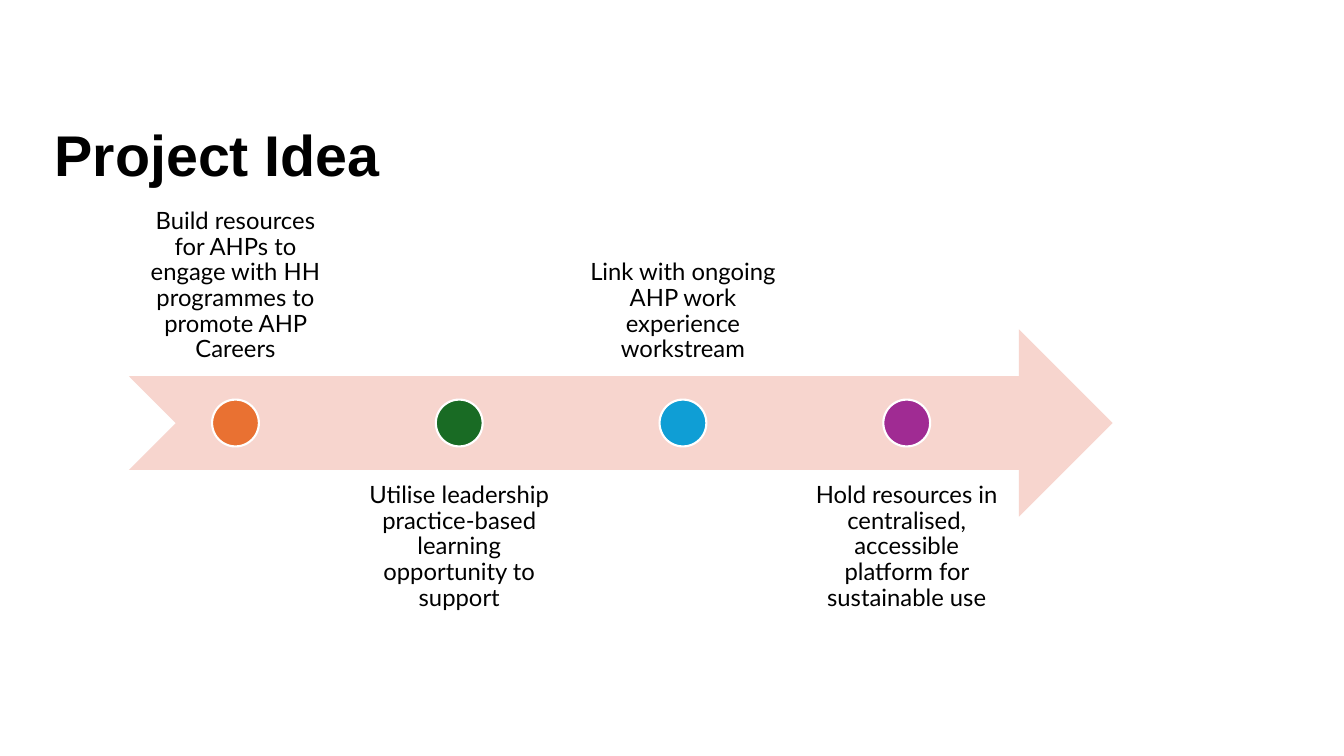
import pptx
import pptx.util
import pptx.dml.color
import pptx.enum.shapes
import pptx.enum.text

Cm = pptx.util.Cm
Pt = pptx.util.Pt
Anchor = pptx.enum.text.MSO_ANCHOR
Align = pptx.enum.text.PP_ALIGN
Preset = pptx.enum.shapes.MSO_SHAPE

STEPS = [
    ("Build resources for AHPs to engage with HH programmes to promote AHP Careers", "E97132"),
    ("Utilise leadership practice-based learning opportunity to support", "196B24"),
    ("Link with ongoing AHP work experience workstream", "0F9ED5"),
    ("Hold resources in centralised, accessible platform for sustainable use", "A02B93"),
]


def color(hex_string):
    return pptx.dml.color.RGBColor.from_string(hex_string)


def add_text(slide, text, left, top, width, height, *, font, size, bold=False,
             align=Align.LEFT, anchor=Anchor.TOP, inset=0):
    frame = slide.shapes.add_textbox(Cm(left), Cm(top), Cm(width), Cm(height)).text_frame
    frame.word_wrap = True
    frame.vertical_anchor = anchor
    frame.margin_left = frame.margin_right = Cm(inset)
    frame.margin_top = frame.margin_bottom = Cm(inset)
    paragraph = frame.paragraphs[0]
    paragraph.alignment = align
    paragraph.line_spacing = 0.9
    run = paragraph.add_run()
    run.text = text
    run.font.name = font
    run.font.size = Pt(size)
    run.font.bold = bold
    run.font.color.rgb = color("000000")


def add_preset(slide, preset, left, top, width, height, fill, line=None):
    shape = slide.shapes.add_shape(preset, Cm(left), Cm(top), Cm(width), Cm(height))
    shape.shadow.inherit = False
    shape.fill.solid()
    shape.fill.fore_color.rgb = color(fill)
    if line:
        shape.line.color.rgb = color(line)
        shape.line.width = Pt(1.5)
    else:
        shape.line.fill.background()


def add_title(slide, left, top, width, height):
    add_text(slide, "Project Idea", left, top, width, height,
             font="Arial", size=41, bold=True, anchor=Anchor.MIDDLE)


def add_timeline(slide, left, top, width, height):
    add_preset(slide, Preset.NOTCHED_RIGHT_ARROW, left, top, width, height, "F7D5CE")
    label_width = 5.37
    pitch = label_width * 1.05
    dot = height / 4
    for index, (text, fill) in enumerate(STEPS):
        label_left = left + index * pitch
        above = index % 2 == 0
        label_top = top + height * (-0.75 if above else 0.75)
        add_text(slide, text, label_left, label_top, label_width, height,
                 font="Lato", size=17, align=Align.CENTER,
                 anchor=Anchor.BOTTOM if above else Anchor.TOP, inset=0.33)
        add_preset(slide, Preset.OVAL, label_left + (label_width - dot) / 2,
                   top + (height - dot) / 2, dot, dot, fill, line="FFFFFF")


def main():
    presentation = pptx.Presentation()
    presentation.slide_width = Cm(33.87)
    presentation.slide_height = Cm(19.05)
    slide = presentation.slides.add_slide(presentation.slide_layouts[6])
    add_title(slide, 1.38, 3.2, 18.16, 1.58)
    add_timeline(slide, 3.25, 8.3, 24.79, 4.72)
    presentation.save("out.pptx")


if __name__ == "__main__":
    main()
